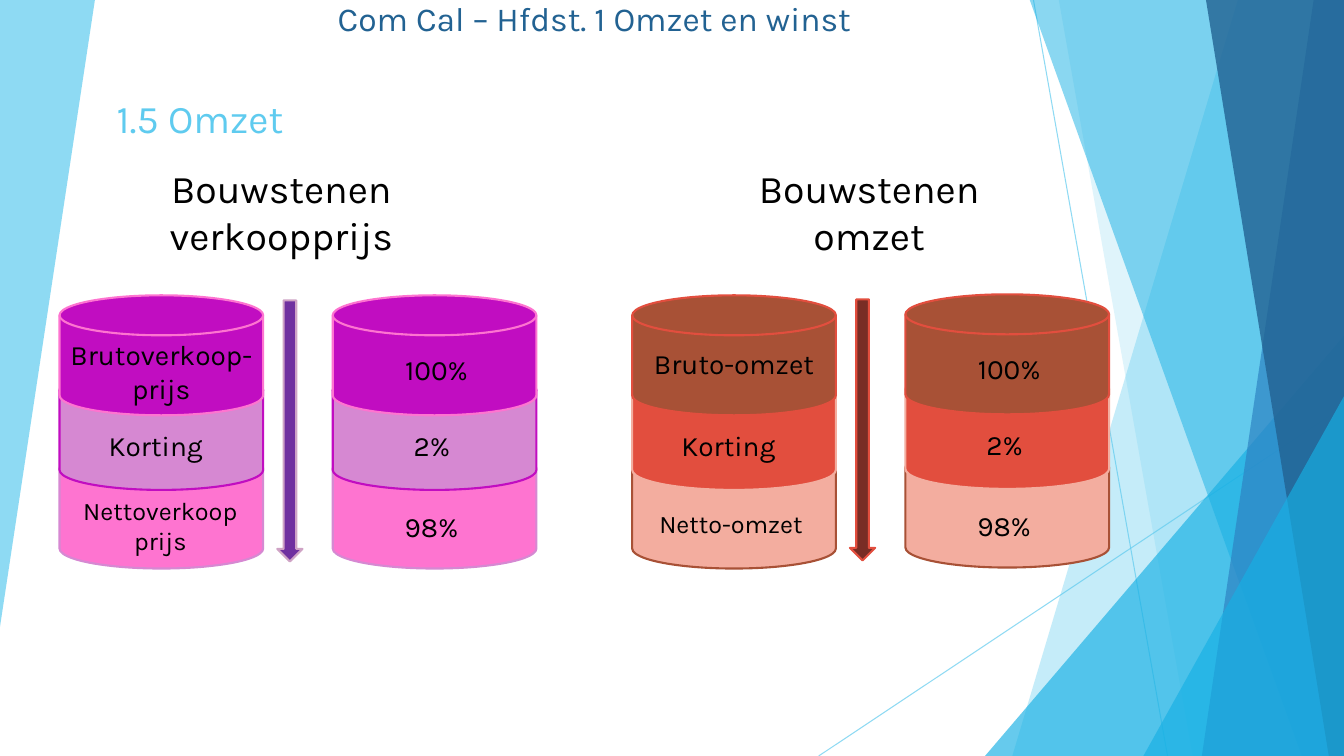
"""Build the slide on the building blocks of selling price and turnover."""
from lxml.etree import SubElement
from pptx import Presentation
from pptx.dml.color import RGBColor
from pptx.enum.shapes import MSO_CONNECTOR, MSO_SHAPE
from pptx.enum.text import MSO_ANCHOR, PP_ALIGN
from pptx.oxml.ns import qn
from pptx.util import Pt

PX = 9144
WIDE, HIGH = 1333, 750
FONT = "Karla"
SKY, CYAN, BLUE, NAVY, BLACK = "5FCBEF", "17B0E4", "2E83C3", "226292", "000000"

LEFT_BAND = ([(0, -1), (94, -1), (94, 1), (0, 622)], SKY, 70)
RAYS = [(1025, 0, 1158, 750), (1333, 403, 812, 750)]
BANDS = [
    ([(1228, -1), (1333, -1), (1333, 750), (1004, 750)], SKY, 36),
    ([(1050, -1), (1333, -1), (1333, 750), (1183, 750)], SKY, 20),
    ((977, 333, 356, 417), CYAN, 66),
    ([(1021, -1), (1333, -1), (1333, 750), (1291, 750)], CYAN, 50),
    ([(1303, -1), (1333, -1), (1333, 750), (1192, 750)], BLUE, 70),
    ([(1196, -1), (1333, -1), (1333, 750), (1318, 750)], NAVY, 80),
    ((1134, 393, 199, 357), CYAN, 66),
]

TITLE = "Com Cal – Hfdst. 1 Omzet en winst"
TOPIC = "1.5 Omzet"
HEADS = [("Bouwstenen verkoopprijs", 152), ("Bouwstenen omzet", 735)]

DISK_W, DISK_H = 202, 119
DISK_TOPS = [445, 367, 293]
PINK = [("FE74D0", "D688D2"), ("D688D2", "C10DC1"), ("C10DC1", "FE74D0")]
RUST = [("F3AD9F", "A85136"), ("E24E3E", "F3AD9F"), ("A85136", "E24E3E")]
SHARES = [
    ("98%", 8, 56, 180, 44, 20),
    ("2%", 21, 53, 155, 44, 20),
    ("100%", 2, 52, 202, 44, 20),
]
PRICE = [
    ("Nettoverkoopprijs", 10, 41, 180, 71, 18),
    ("Korting", 18, 53, 155, 44, 20),
    ("Brutoverkoop-prijs", 0, 37, 202, 77, 20),
]
SALES = [
    ("Netto-omzet", 8, 54, 180, 40, 18),
    ("Korting", 18, 53, 155, 44, 20),
    ("Bruto-omzet", 0, 46, 202, 44, 20),
]
STACKS = [
    (59, 0, PINK, PRICE),
    (330, 0, PINK, SHARES),
    (627, 0, RUST, SALES),
    (898, -1, RUST, SHARES),
]
ARROWS = [(275, 298, "7030A0", "CFA3C5"), (843, 297, "792D25", "E24E3E")]

deck = Presentation()
deck.slide_width, deck.slide_height = WIDE * PX, HIGH * PX
slide = deck.slides.add_slide(deck.slide_layouts[6])
shapes = slide.shapes


def tint(color, hue, alpha=100):
    """Set a colour and, when below 100, its opacity in percent."""
    color.rgb = RGBColor.from_string(hue)
    if alpha < 100:
        node = color._xFill.find(qn("a:srgbClr"))
        SubElement(node, qn("a:alpha")).set("val", str(alpha * 1000))


def paint(shape, hue, edge=None, alpha=100):
    """Fill a shape and outline it if an edge colour is given."""
    shape.shadow.inherit = False
    shape.fill.solid()
    tint(shape.fill.fore_color, hue, alpha)
    if edge:
        tint(shape.line.color, edge)
        shape.line.width = Pt(1.5)
    else:
        shape.line.fill.background()
    return shape


def block(kind, x, y, w, h, hue, edge=None, alpha=100):
    """Add a painted preset shape."""
    shape = shapes.add_shape(kind, x * PX, y * PX, w * PX, h * PX)
    return paint(shape, hue, edge, alpha)


def band(form, hue, alpha):
    """Add a clear polygon, or a right triangle from a box."""
    if isinstance(form, tuple):
        wedge = block(MSO_SHAPE.ISOSCELES_TRIANGLE, *form, hue, alpha=alpha)
        wedge.adjustments[0] = 1
        return
    pen = shapes.build_freeform(*form[0], scale=PX)
    pen.add_line_segments(form[1:], close=True)
    paint(pen.convert_to_shape(), hue, alpha=alpha)


def ray(x1, y1, x2, y2):
    """Add a thin clear line."""
    line = shapes.add_connector(
        MSO_CONNECTOR.STRAIGHT, x1 * PX, y1 * PX, x2 * PX, y2 * PX)
    line.line.width = Pt(0.75)
    line.line.fill.solid()
    tint(line.line.fill.fore_color, SKY, 70)
    SubElement(line._element.spPr, qn("a:effectLst"))


def label(text, x, y, w, h, size, hue=BLACK, align=PP_ALIGN.CENTER,
          anchor=MSO_ANCHOR.TOP):
    """Add a wrapped text box with one run."""
    frame = shapes.add_textbox(x * PX, y * PX, w * PX, h * PX).text_frame
    frame.word_wrap = True
    frame.vertical_anchor = anchor
    para = frame.paragraphs[0]
    para.alignment = align
    run = para.add_run()
    run.text = text
    run.font.name, run.font.size = FONT, Pt(size)
    tint(run.font.color, hue)


band(*LEFT_BAND)
for ends in RAYS:
    ray(*ends)
for item in BANDS:
    band(*item)

label(TITLE, 0, 0, 1179, 43, 24, NAVY, anchor=MSO_ANCHOR.BOTTOM)
label(TOPIC, 106, 89, 546, 57, 28, SKY, PP_ALIGN.LEFT)
for text, x in HEADS:
    label(text, x, 158, 254, 104, 28)

for left, shift, hues, names in STACKS:
    for top, (hue, edge), (text, dx, dy, w, h, size) in zip(
            DISK_TOPS, hues, names):
        y = top + shift
        block(MSO_SHAPE.FLOWCHART_MAGNETIC_DISK, left, y, DISK_W, DISK_H,
              hue, edge)
        label(text, left + dx, y + dy, w, h, size)

for x, y, hue, edge in ARROWS:
    block(MSO_SHAPE.UP_ARROW, x, y, 25, 259, hue, edge).rotation = 180

deck.save("out.pptx")
